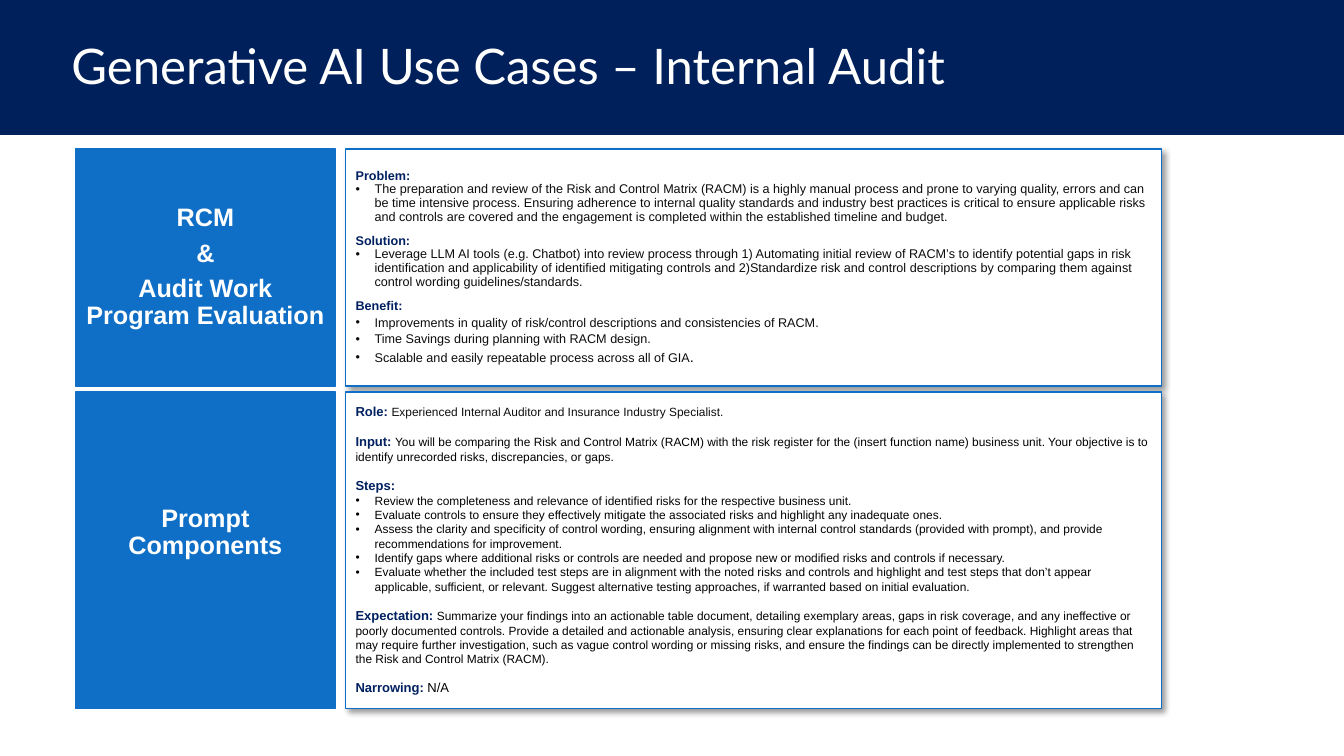
import lxml.etree
import pptx
import pptx.dml.color
import pptx.enum.dml
import pptx.enum.shapes
import pptx.enum.text
import pptx.oxml.ns
import pptx.util

Cm = pptx.util.Cm
Pt = pptx.util.Pt
NAVY, BLUE, WHITE, BLACK, GREY = "002060", "0F6FC6", "FFFFFF", "000000", "0D0D0D"


def color(value):
    return pptx.dml.color.RGBColor.from_string(value)


def add_element(parent, tag, **attributes):
    element = lxml.etree.SubElement(parent, pptx.oxml.ns.qn(tag))
    for name, value in attributes.items():
        element.set(name, value)
    return element


presentation = pptx.Presentation()
presentation.slide_width = Cm(33.86)
presentation.slide_height = Cm(19.05)
slide = presentation.slides.add_slide(presentation.slide_layouts[6])

band = slide.shapes.add_shape(
    pptx.enum.shapes.MSO_SHAPE.RECTANGLE, 0, 0, presentation.slide_width, Cm(3.4))
band.shadow.inherit = False
band.fill.solid()
band.fill.fore_color.rgb = color("00205B")
band.line.fill.background()

divider = slide.shapes.add_connector(
    pptx.enum.shapes.MSO_CONNECTOR.STRAIGHT, Cm(1.96), Cm(3.4), Cm(30.56), Cm(3.4))
divider.line.color.rgb = color(WHITE)
divider.line.width = Pt(0.5)
divider.line.dash_style = pptx.enum.dml.MSO_LINE.DASH
add_element(divider._element.spPr, "a:effectLst")

title = slide.shapes.add_textbox(Cm(1.55), Cm(0.2), Cm(29.44), Cm(3.05))
title.text_frame.word_wrap = True
title.text_frame.vertical_anchor = pptx.enum.text.MSO_ANCHOR.MIDDLE
paragraph = title.text_frame.paragraphs[0]
paragraph.text = "Generative AI Use Cases – Internal Audit"
paragraph.line_spacing = 0.9
paragraph.font.name = "Lato"
paragraph.font.size = Pt(35)
paragraph.font.color.rgb = color(WHITE)

label = {"size": 18, "color": WHITE, "bold": True}
case_heading = {"size": 9, "color": NAVY, "bold": True}
case_text = {"size": 9, "color": GREY, "bold": False}
case_end = {"size": 10.5, "color": GREY, "bold": False}
prompt_heading = {"size": 9.3, "color": NAVY, "bold": True}
prompt_text = {"size": 8.5, "color": BLACK, "bold": False}
role_text = {"size": 8.5, "color": GREY, "bold": False}
narrowing_text = {"size": 9.3, "color": BLACK, "bold": False}

centered = {"alignment": pptx.enum.text.PP_ALIGN.CENTER, "line_spacing": 0.9, "space_after": Pt(6)}
left = pptx.enum.text.PP_ALIGN.LEFT
case_first = {"alignment": left, "line_spacing": 0.9}
case_next = {"alignment": left, "line_spacing": 0.9, "space_before": Pt(7.5)}
benefit = {"alignment": left, "line_spacing": 1.1}
prompt_first = {"alignment": left, "line_spacing": 0.95}
prompt_next = {"alignment": left, "space_before": Pt(10)}
prompt_step = {"alignment": left}

use_case = [
    (case_first, False, [("Problem:", case_heading)]),
    (case_first, True, [("The preparation and review of the Risk and Control Matrix (RACM) is a highly manual process and prone to varying quality, errors and can be time intensive process. Ensuring adherence to internal quality standards and industry best practices is critical to ensure applicable risks and controls are covered and the engagement is completed within the established timeline and budget.", case_text)]),
    (case_next, False, [("Solution:", case_heading)]),
    (case_first, True, [("Leverage LLM AI tools (e.g. Chatbot) into review process through 1) Automating initial review of RACM’s to identify potential gaps in risk identification and applicability of identified mitigating controls and 2)Standardize risk and control descriptions by comparing them against control wording guidelines/standards.", case_text)]),
    (case_next, False, [("Benefit:", case_heading)]),
    (benefit, True, [("Improvements in quality of risk/control descriptions and consistencies of RACM.", case_text)]),
    (benefit, True, [("Time Savings during planning with RACM design.", case_text)]),
    (benefit, True, [("Scalable and easily repeatable process across all of GIA", case_text), (".", case_end)]),
]

steps = [
    "Review the completeness and relevance of identified risks for the respective business unit.",
    "Evaluate controls to ensure they effectively mitigate the associated risks and highlight any inadequate ones.",
    "Assess the clarity and specificity of control wording, ensuring alignment with internal control standards (provided with prompt), and provide recommendations for improvement.",
    "Identify gaps where additional risks or controls are needed and propose new or modified risks and controls if necessary.",
    "Evaluate whether the included test steps are in alignment with the noted risks and controls and highlight and test steps that don’t appear applicable, sufficient, or relevant. Suggest alternative testing approaches, if warranted based on initial evaluation.",
]
prompt = [
    (prompt_first, False, [("Role: ", prompt_heading), ("Experienced Internal Auditor and Insurance Industry Specialist.", role_text)]),
    (prompt_next, False, [("Input: ", prompt_heading), ("You will be comparing the Risk and Control Matrix (RACM) with the risk register for the (insert function name) business unit. Your objective is to identify unrecorded risks, discrepancies, or gaps.", prompt_text)]),
    (prompt_next, False, [("Steps:", prompt_heading)]),
    *[(prompt_step, True, [(step, prompt_text)]) for step in steps],
    (prompt_next, False, [("Expectation: ", prompt_heading), ("Summarize your findings into an actionable table document, detailing exemplary areas, gaps in risk coverage, and any ineffective or poorly documented controls. Provide a detailed and actionable analysis, ensuring clear explanations for each point of feedback. Highlight areas that may require further investigation, such as vague control wording or missing risks, and ensure the findings can be directly implemented to strengthen the Risk and Control Matrix (RACM).", prompt_text)]),
    (prompt_next, False, [("Narrowing: ", prompt_heading), ("N/A", narrowing_text)]),
]
case_label = [(centered, False, [(line, label)]) for line in ("RCM", "&", "Audit Work Program Evaluation")]
prompt_label = [(centered, False, [("Prompt Components", label)])]

label_column = (1.9, 6.55, BLUE, False)
detail_column = (8.71, 20.55, WHITE, True)
case_row = (3.76, 5.97)
prompt_row = (9.88, 7.98)
panels = [
    (detail_column, case_row, use_case, 0.13),
    (label_column, case_row, case_label, 0.13),
    (detail_column, prompt_row, prompt, 0.13),
    (label_column, prompt_row, prompt_label, 1),
]

for (x, width, fill, shadowed), (y, height), paragraphs, bottom in panels:
    panel = slide.shapes.add_shape(
        pptx.enum.shapes.MSO_SHAPE.RECTANGLE, Cm(x), Cm(y), Cm(width), Cm(height))
    panel.fill.solid()
    panel.fill.fore_color.rgb = color(fill)
    panel.line.color.rgb = color(BLUE)
    panel.line.width = Pt(1)
    panel.shadow.inherit = False
    if shadowed:
        effects = panel._element.spPr.find(pptx.oxml.ns.qn("a:effectLst"))
        shadow = add_element(effects, "a:outerShdw", blurRad=str(Pt(4)), dist=str(Pt(3)),
                             dir="2700000", algn="tl", rotWithShape="0")
        add_element(add_element(shadow, "a:srgbClr", val=BLACK), "a:alpha", val="40000")
    frame = panel.text_frame
    frame.word_wrap = True
    frame.vertical_anchor = pptx.enum.text.MSO_ANCHOR.MIDDLE
    frame.margin_bottom = Cm(bottom)
    for index, (layout, bulleted, runs) in enumerate(paragraphs):
        paragraph = frame.add_paragraph() if index else frame.paragraphs[0]
        if bulleted:
            properties = paragraph._p.get_or_add_pPr()
            properties.set("marL", str(Cm(0.48)))
            properties.set("indent", str(Cm(-0.48)))
            add_element(properties, "a:buFont", typeface="Arial")
            add_element(properties, "a:buChar", char="•")
        for name, value in layout.items():
            setattr(paragraph, name, value)
        for text, style in runs:
            run = paragraph.add_run()
            run.text = text
            font = {"name": "Arial", "size": Pt(style["size"]), "bold": style["bold"]}
            for name, value in font.items():
                setattr(run.font, name, value)
            run.font.color.rgb = color(style["color"])

presentation.save("out.pptx")
